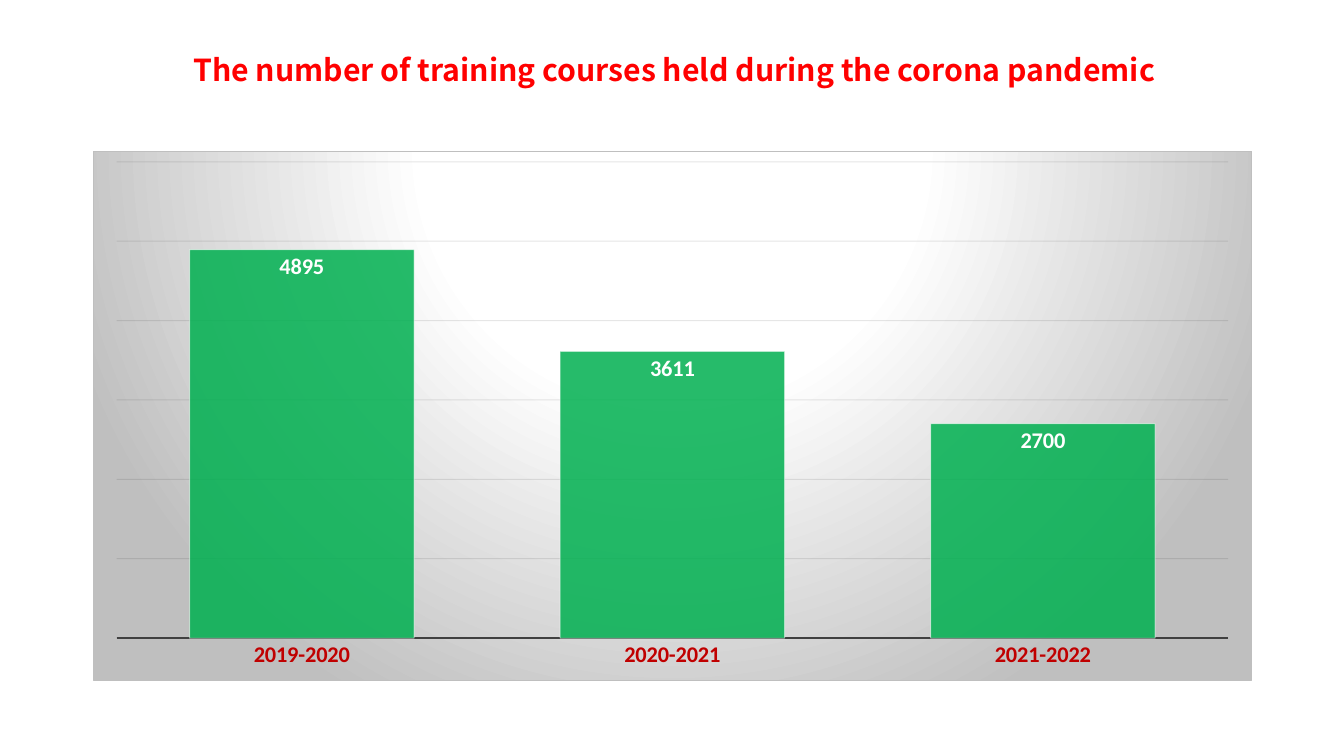
"""Builds a slide with a column chart of training courses held per year."""
from dataclasses import dataclass

import lxml.etree
import pptx
import pptx.chart.chart
import pptx.chart.data
import pptx.dml.color
import pptx.dml.line
import pptx.enum.chart
import pptx.enum.text
import pptx.oxml
import pptx.oxml.ns
import pptx.slide
import pptx.text.text
import pptx.util

COLORS = {
    "title": "FF0000",
    "bar": "00B050",
    "white": "FFFFFF",
    "category": "C00000",
    "axis": "404040",
    "grid": "0D0D0D",
    "edge": "BFBFBF",
    "text": "000000",
}


@dataclass(frozen=True)
class Frame:
    left: float
    top: float
    width: float
    height: float

    def lengths(self) -> tuple[pptx.util.Cm, ...]:
        return tuple(pptx.util.Cm(n) for n in (self.left, self.top, self.width, self.height))


@dataclass(frozen=True)
class FontStyle:
    name: str
    size: float
    color: str
    bold: bool = True


@dataclass(frozen=True)
class YearCount:
    years: str
    courses: int


TITLE = "The number of training courses held during the corona pandemic"
TITLE_FRAME = Frame(2.39, 1.3, 29.21, 1.9)
CHART_FRAME = Frame(2.34, 3.8, 29.21, 13.36)
TITLE_STYLE = FontStyle("Noto Sans CJK SC", 21.6, "title")
CHART_STYLE = FontStyle("Calibri", 10, "text", False)
CATEGORY_STYLE = FontStyle("Calibri", 16, "category")
VALUE_STYLE = FontStyle("Calibri", 16, "white")
COUNTS = [
    YearCount("2019-2020", 4895),
    YearCount("2020-2021", 3611),
    YearCount("2021-2022", 2700),
]
PLOT_LAYOUT = {"x": 0.02, "y": 0.02, "w": 0.96, "h": 0.9}


def rgb(name: str) -> pptx.dml.color.RGBColor:
    return pptx.dml.color.RGBColor.from_string(COLORS[name])


def style_font(font: pptx.text.text.Font, style: FontStyle) -> None:
    font.name = style.name
    font.size = pptx.util.Pt(style.size)
    font.bold = style.bold
    font.color.rgb = rgb(style.color)


def style_line(line: pptx.dml.line.LineFormat, color: str, width: float) -> None:
    line.color.rgb = rgb(color)
    line.width = pptx.util.Pt(width)


def set_opacity(chart: pptx.chart.chart.Chart, query: str, percent: int) -> None:
    for color in chart.element.xpath(query):
        alpha = lxml.etree.SubElement(color, pptx.oxml.ns.qn("a:alpha"))
        alpha.set("val", str(percent * 1000))


def add_title(page: pptx.slide.Slide) -> None:
    box = page.shapes.add_textbox(*TITLE_FRAME.lengths())
    frame = box.text_frame
    frame.word_wrap = True
    frame.vertical_anchor = pptx.enum.text.MSO_ANCHOR.TOP
    frame.margin_top = frame.margin_bottom = 0
    para = frame.paragraphs[0]
    para.alignment = pptx.enum.text.PP_ALIGN.CENTER
    span = para.add_run()
    span.text = TITLE
    style_font(span.font, TITLE_STYLE)
    east_asian = lxml.etree.SubElement(span.font._element, pptx.oxml.ns.qn("a:ea"))
    east_asian.set("typeface", TITLE_STYLE.name)


def add_backdrop(chart: pptx.chart.chart.Chart) -> None:
    stops = "".join(
        f'<a:gs pos="{position * 1000}"><a:srgbClr val="{COLORS[name]}"/></a:gs>'
        for position, name in ((0, "white"), (39, "white"), (100, "edge"))
    )
    properties = pptx.oxml.parse_xml(
        f'<c:spPr {pptx.oxml.ns.nsdecls("c", "a")}>'
        f'<a:gradFill rotWithShape="1"><a:gsLst>{stops}</a:gsLst><a:path path="circle">'
        '<a:fillToRect l="50000" t="-80000" r="50000" b="180000"/></a:path></a:gradFill>'
        f'<a:ln w="{pptx.util.Pt(0.75)}"><a:solidFill>'
        f'<a:srgbClr val="{COLORS["edge"]}"/></a:solidFill></a:ln></c:spPr>'
    )
    chart.element.xpath("c:chart")[0].addnext(properties)


def place_plot(chart: pptx.chart.chart.Chart) -> None:
    area = chart.element.xpath("c:chart/c:plotArea")[0]
    for old in area.xpath("c:layout"):
        area.remove(old)
    modes = '<c:xMode val="edge"/><c:yMode val="edge"/>'
    sizes = "".join(f'<c:{key} val="{value}"/>' for key, value in PLOT_LAYOUT.items())
    area.insert(0, pptx.oxml.parse_xml(
        f'<c:layout {pptx.oxml.ns.nsdecls("c")}><c:manualLayout>'
        f'<c:layoutTarget val="inner"/>{modes}{sizes}</c:manualLayout></c:layout>'
    ))


def add_course_chart(page: pptx.slide.Slide) -> None:
    data = pptx.chart.data.CategoryChartData()
    data.categories = [count.years for count in COUNTS]
    data.add_series("Series 1", [count.courses for count in COUNTS])
    kind = pptx.enum.chart.XL_CHART_TYPE.COLUMN_CLUSTERED
    chart = page.shapes.add_chart(kind, *CHART_FRAME.lengths(), data).chart
    chart.has_legend = False
    chart.has_title = False
    style_font(chart.font, CHART_STYLE)

    category_axis = chart.category_axis
    category_axis.major_tick_mark = pptx.enum.chart.XL_TICK_MARK.NONE
    style_font(category_axis.tick_labels.font, CATEGORY_STYLE)
    style_line(category_axis.format.line, "axis", 1.5)

    value_axis = chart.value_axis
    value_axis.minimum_scale = 0
    value_axis.maximum_scale = 6000
    value_axis.major_unit = 1000
    value_axis.visible = False
    value_axis.has_major_gridlines = True
    style_line(value_axis.major_gridlines.format.line, "grid", 0.75)

    plot = chart.plots[0]
    plot.gap_width = 65
    plot.vary_by_categories = False
    series = plot.series[0]
    series.format.fill.solid()
    series.format.fill.fore_color.rgb = rgb("bar")
    style_line(series.format.line, "white", 0.75)
    labels = series.data_labels
    labels.show_value = True
    labels.position = pptx.enum.chart.XL_LABEL_POSITION.INSIDE_END
    style_font(labels.font, VALUE_STYLE)

    set_opacity(chart, ".//c:ser/c:spPr/a:solidFill/a:srgbClr", 85)
    set_opacity(chart, ".//c:ser/c:spPr/a:ln//a:srgbClr", 50)
    set_opacity(chart, ".//c:majorGridlines//a:srgbClr", 10)
    place_plot(chart)
    add_backdrop(chart)


def main() -> None:
    deck = pptx.Presentation()
    deck.slide_width = pptx.util.Cm(33.87)
    deck.slide_height = pptx.util.Cm(19.05)
    page = deck.slides.add_slide(deck.slide_layouts[6])
    add_title(page)
    add_course_chart(page)
    deck.save("out.pptx")


if __name__ == "__main__":
    main()
